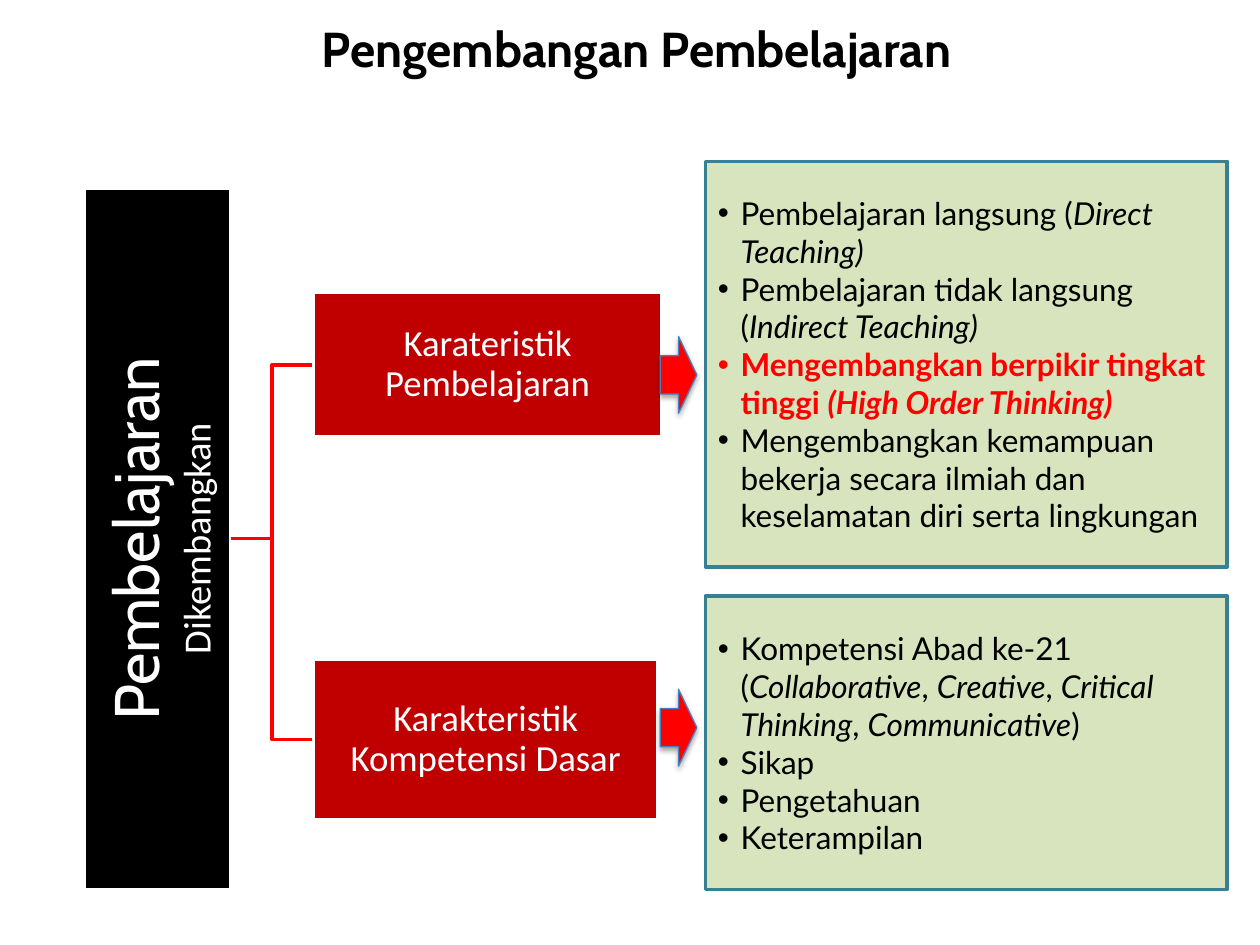
from dataclasses import dataclass

from lxml.etree import SubElement
from pptx import Presentation
from pptx.dml.color import RGBColor
from pptx.enum.shapes import MSO_SHAPE
from pptx.enum.text import MSO_ANCHOR, PP_ALIGN
from pptx.oxml.ns import qn
from pptx.util import Inches, Pt


@dataclass(frozen=True)
class Theme:
    """Colours, fonts and type sizes of the slide."""
    black: str = "000000"
    white: str = "FFFFFF"
    red: str = "FF0000"
    dark_red: str = "C00000"
    green: str = "D7E4BD"
    teal: str = "377F92"
    blue: str = "4B7EBC"
    head_font: str = "Cabin"
    label_font: str = "Calibri"
    body_font: str = "Lato"
    title: int = 28
    stage: int = 36
    substage: int = 22
    label: int = 21
    body: int = 18


T = Theme()
ITALIC = {"italic": True}
KEY = {"bold": True, "color": T.red}
BODY = {"name": T.body_font, "size": T.body, "color": T.black}
LABEL = {"name": T.label_font, "size": T.label, "color": T.white}

METHODS = [
    [("Pembelajaran langsung (", {}), ("Direct Teaching)", ITALIC)],
    [("Pembelajaran tidak langsung (", {}), ("Indirect Teaching)", ITALIC)],
    [("Mengembangkan berpikir tingkat tinggi ", KEY),
     ("(High Order Thinking)", KEY | ITALIC)],
    [("Mengembangkan kemampuan bekerja secara ilmiah dan keselamatan diri "
      "serta lingkungan", {})],
]
COMPETENCES = [
    [("Kompetensi Abad ke-21 (", {}), ("Collaborative", ITALIC), (", ", {}),
     ("Creative", ITALIC), (", ", {}), ("Critical Thinking", ITALIC),
     (", ", {}), ("Communicative", ITALIC), (")", {})],
    [("Sikap", {})],
    [("Pengetahuan", {})],
    [("Keterampilan", {})],
]


def set_frame(tf, margins, anchor):
    """Set wrapping, margins (horizontal, vertical) and anchor of a frame."""
    mx, my = (Inches(m) for m in margins)
    values = {"word_wrap": True, "vertical_anchor": anchor,
              "margin_left": mx, "margin_right": mx,
              "margin_top": my, "margin_bottom": my}
    for name, value in values.items():
        setattr(tf, name, value)


def add_run(p, text, fmt):
    """Append a run formatted from a dict of font values."""
    r = p.add_run()
    r.text = text
    for name, value in fmt.items():
        if name == "color":
            r.font.color.rgb = RGBColor.from_string(value)
        else:
            setattr(r.font, name, Pt(value) if name == "size" else value)


def add_paragraphs(tf, paragraphs, base, align=PP_ALIGN.CENTER, spacing=None):
    """Fill a frame with paragraphs made of (text, format) runs."""
    for i, runs in enumerate(paragraphs):
        p = tf.add_paragraph() if i else tf.paragraphs[0]
        p.alignment = align
        p.line_spacing = spacing
        for text, fmt in runs:
            add_run(p, text, base | fmt)


def style_line(sp, color, width):
    """Give a shape its outline and no shadow."""
    sp.line.color.rgb = RGBColor.from_string(color)
    sp.line.width = Pt(width)
    sp.shadow.inherit = False


def add_box(s, kind, box, fill, line, width=2):
    """Add a filled preset shape in the given box."""
    sp = s.shapes.add_shape(kind, *(Inches(v) for v in box))
    sp.fill.solid()
    sp.fill.fore_color.rgb = RGBColor.from_string(fill)
    style_line(sp, line, width)
    return sp


def add_title(s, box, text):
    """Add the slide title."""
    tf = s.shapes.add_textbox(*(Inches(v) for v in box)).text_frame
    set_frame(tf, (0.08, 0.04), MSO_ANCHOR.TOP)
    add_paragraphs(tf, [[(text, {})]], {
        "name": T.head_font, "size": T.title, "bold": True, "color": T.black})


def add_stage(s, box, title, subtitle):
    """Add the upright bar whose text reads from bottom to top."""
    x, y, w, h = box
    turned = (x + (w - h) / 2, y + (h - w) / 2, h, w)
    sp = add_box(s, MSO_SHAPE.RECTANGLE, turned, T.black, T.white)
    sp.rotation = 270
    set_frame(sp.text_frame, (0.03, 0.03), MSO_ANCHOR.MIDDLE)
    add_paragraphs(sp.text_frame, [
        [(title, {"name": T.head_font, "size": T.stage})], [(subtitle, {})],
    ], LABEL | {"size": T.substage})


def add_branch(s, start, end):
    """Add an elbow line that turns halfway between two points."""
    (x1, y1), (x2, y2) = start, end
    mid = (x1 + x2) / 2
    fb = s.shapes.build_freeform(Inches(x1), Inches(y1))
    fb.add_line_segments([(Inches(x), Inches(y)) for x, y in
                          ((mid, y1), (mid, y2), (x2, y2))], close=False)
    sp = fb.convert_to_shape()
    sp.fill.background()
    style_line(sp, T.red, 2)


def add_label(s, box, text):
    """Add a red box with a centred label."""
    sp = add_box(s, MSO_SHAPE.RECTANGLE, box, T.dark_red, T.white)
    set_frame(sp.text_frame, (0.01, 0.01), MSO_ANCHOR.MIDDLE)
    add_paragraphs(sp.text_frame, [[(text, {})]], LABEL, spacing=0.9)


def add_bullets(s, box, paragraphs):
    """Add a green panel with a bulleted list."""
    sp = add_box(s, MSO_SHAPE.RECTANGLE, box, T.green, T.teal)
    tf = sp.text_frame
    set_frame(tf, (0.1, 0.05), MSO_ANCHOR.MIDDLE)
    add_paragraphs(tf, paragraphs, BODY, PP_ALIGN.LEFT)
    indent = Inches(0.18)
    for p in tf.paragraphs:
        pPr = p._p.get_or_add_pPr()
        pPr.set("marL", str(indent))
        pPr.set("indent", str(-indent))
        SubElement(pPr, qn("a:buFont"), typeface="Arial")
        SubElement(pPr, qn("a:buChar"), char="•")


def add_arrow(s, box):
    """Add a red arrow with a soft shadow below it."""
    sp = add_box(s, MSO_SHAPE.RIGHT_ARROW, box, T.red, T.blue, 0.75)
    effects = sp._element.spPr.find(qn("a:effectLst"))
    shadow = SubElement(effects, qn("a:outerShdw"), blurRad=str(Pt(3.1)),
                        dist=str(Pt(1.8)), dir="5400000", rotWithShape="0")
    color = SubElement(shadow, qn("a:srgbClr"), val=T.black)
    SubElement(color, qn("a:alpha"), val="35000")


def main():
    """Build the slide and save it."""
    prs = Presentation()
    prs.slide_width, prs.slide_height = Inches(10), Inches(7.5)
    s = prs.slides.add_slide(prs.slide_layouts[6])
    add_title(s, (1.11, 0.11, 7.88, 0.56), "Pengembangan Pembelajaran")
    stage = (0.67, 1.49, 1.16, 5.57)
    add_stage(s, stage, "Pembelajaran", "Dikembangkan")
    root = (stage[0] + stage[2], stage[1] + stage[3] / 2)
    rows = [
        ("Karateristik Pembelajaran", (2.49, 2.32, 2.76, 1.15), 2.67,
         METHODS, (5.6, 1.28, 4.14, 3.22)),
        ("Karakteristik Kompetensi Dasar", (2.49, 5.23, 2.73, 1.28), 5.47,
         COMPETENCES, (5.6, 4.73, 4.14, 2.33)),
    ]
    for text, box, arrow_top, paragraphs, panel in rows:
        add_branch(s, root, (box[0], box[1] + box[3] / 2))
        add_label(s, box, text)
        add_bullets(s, panel, paragraphs)
        add_arrow(s, (5.24, arrow_top, 0.29, 0.61))
    prs.save("out.pptx")


if __name__ == "__main__":
    main()
